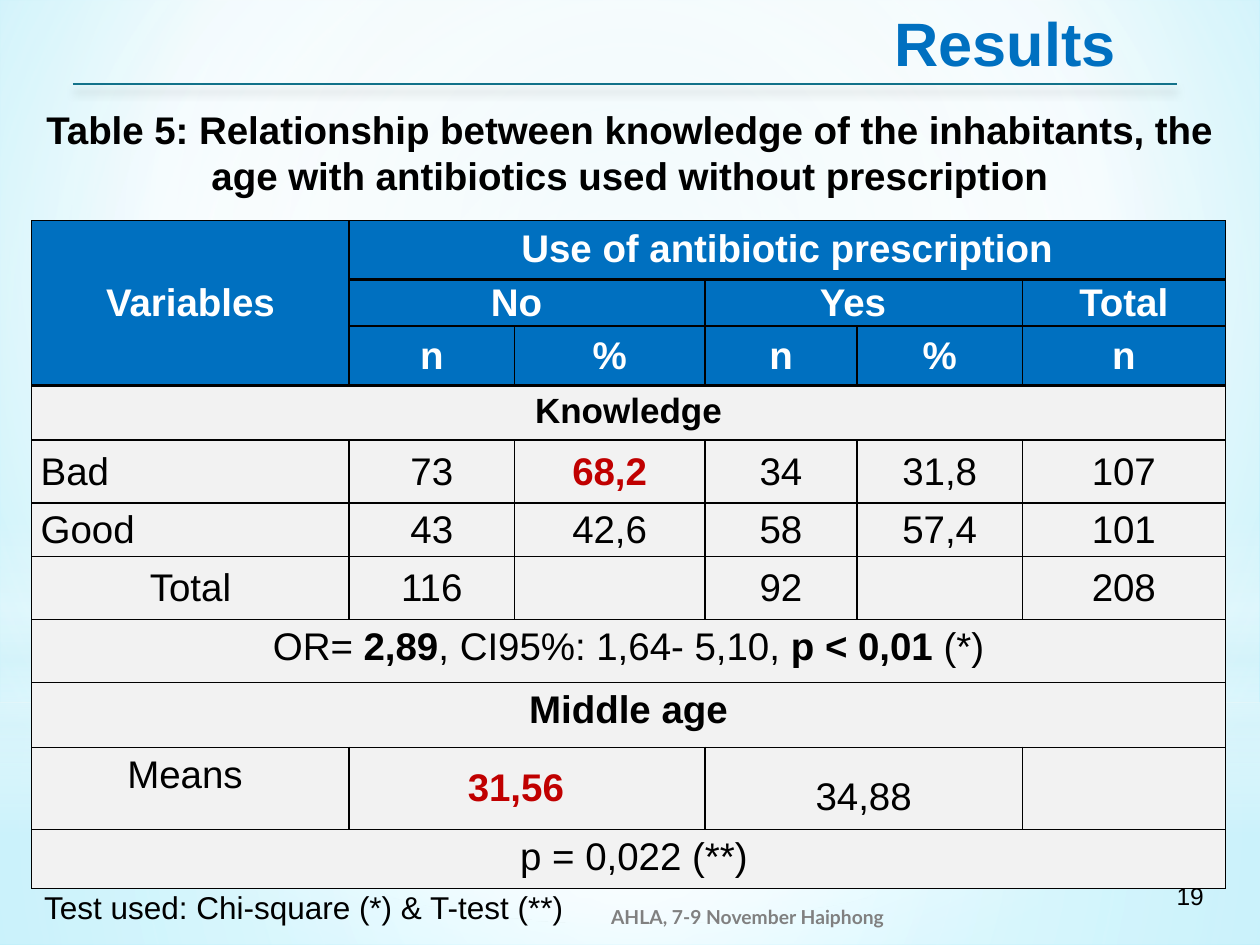
from dataclasses import dataclass

from lxml import etree
from pptx import Presentation
from pptx import util as u
from pptx.dml import color
from pptx.enum import shapes, text
from pptx.oxml import ns


@dataclass
class Theme:
    font: str = "Arial"
    footer_font: str = "Lato"
    blue: str = "0070C0"
    red: str = "C00000"
    black: str = "000000"
    white: str = "FFFFFF"
    panel: str = "F2F2F2"
    rule: str = "12728A"
    gray: str = "808080"
    mist: str = "DEF5FA"
    pale: str = "CDEFF7"
    aqua: str = "7CE7FF"
    title: int = 35
    body: int = 22
    section: int = 20
    note: int = 18
    page: int = 14
    footer: int = 11


theme = Theme()
Cm = u.Cm
LEFT, CENTER = text.PP_ALIGN.LEFT, text.PP_ALIGN.CENTER
TOP, MIDDLE = text.MSO_ANCHOR.TOP, text.MSO_ANCHOR.MIDDLE


def write(frame, words, size=theme.body, ink=theme.black, bold=False,
          font=theme.font, align=LEFT, spacing=None):
    paragraph = frame.paragraphs[0]
    paragraph.alignment = align
    paragraph.line_spacing = spacing
    for index, part in enumerate(words.split("|")):
        run = paragraph.add_run()
        run.text = part
        run.font.name = font
        run.font.size = u.Pt(size)
        run.font.bold = bold != (index % 2 == 1)
        run.font.color.rgb = color.RGBColor.from_string(ink)


def shade(fill, owner, stops, focus=None):
    fill.gradient()
    gradient = owner.find(".//" + ns.qn("a:gradFill"))
    for child in list(gradient):
        gradient.remove(child)
    stop_list = etree.SubElement(gradient, ns.qn("a:gsLst"))
    for position, tint, opacity in stops:
        stop = etree.SubElement(stop_list, ns.qn("a:gs"), pos=str(position * 1000))
        tone = etree.SubElement(stop, ns.qn("a:srgbClr"), val=tint)
        if opacity < 100:
            etree.SubElement(tone, ns.qn("a:alpha"), val=str(opacity * 1000))
    if focus:
        path = etree.SubElement(gradient, ns.qn("a:path"), path="circle")
        edges = {side: str(value * 1000) for side, value in zip("ltrb", focus)}
        etree.SubElement(path, ns.qn("a:fillToRect"), **edges)
    else:
        etree.SubElement(gradient, ns.qn("a:lin"), ang="5400000", scaled="0")


deck = Presentation()
deck.slide_width, deck.slide_height = Cm(25.4), Cm(19.05)
slide = deck.slides.add_slide(deck.slide_layouts[5])

shade(slide.background.fill, slide.element,
      [(0, theme.pale, 100), (60, theme.white, 100), (100, theme.aqua, 100)],
      (20, 10, 20, 60))
middle = (50, 50, 50, 50)
box, oval = shapes.MSO_SHAPE.RECTANGLE, shapes.MSO_SHAPE.OVAL
glows = [
    (box, 14.17, 4.88, middle,
     [(0, theme.white, 91), (37, theme.white, 76), (100, theme.mist, 79)]),
    (box, 0, 14.17, middle,
     [(0, theme.white, 89), (48, theme.white, 62), (100, theme.mist, 79)]),
    (box, 10.46, 6.35, None,
     [(0, theme.white, 0), (29, theme.white, 30), (45, theme.mist, 40),
      (55, theme.white, 26), (65, theme.mist, 60), (100, theme.white, 0)]),
    (oval, 4.45, 14.17, middle, [(0, theme.white, 100), (56, theme.white, 0)]),
]
for outline, top, height, focus, stops in glows:
    glow = slide.shapes.add_shape(outline, 0, Cm(top), deck.slide_width, Cm(height))
    glow.shadow.inherit = False
    glow.line.fill.background()
    shade(glow.fill, glow.element, stops, focus)

rule = slide.shapes.add_connector(
    shapes.MSO_CONNECTOR.STRAIGHT, Cm(1.47), Cm(1.7), Cm(23.72), Cm(1.7))
rule.line.color.rgb = color.RGBColor.from_string(theme.rule)
rule.line.width = u.Pt(1.25)
effects = etree.SubElement(rule.element.find(ns.qn("p:spPr")), ns.qn("a:effectLst"))
shadow = etree.SubElement(effects, ns.qn("a:outerShdw"), blurRad=str(u.Pt(5)),
                          dist=str(u.Pt(4)), dir="5400000", rotWithShape="0")
shadow_ink = etree.SubElement(shadow, ns.qn("a:srgbClr"), val=theme.black)
etree.SubElement(shadow_ink, ns.qn("a:alpha"), val="20000")

heading = slide.shapes.title
heading.element.getparent().append(heading.element)
heading.left, heading.top, heading.width, heading.height = (
    Cm(17.78), Cm(-0.03), Cm(5.03), Cm(1.75))
heading.text_frame.word_wrap = False
heading.text_frame.vertical_anchor = TOP
heading.text_frame.auto_size = text.MSO_AUTO_SIZE.SHAPE_TO_FIT_TEXT
write(heading.text_frame, "Results", size=theme.title, ink=theme.blue, bold=True)

captions = [
    ((0, 2.01, 25.4, 2.13), True, TOP,
     "Table 5: Relationship between knowledge of the inhabitants, "
     "the age with antibiotics used without prescription",
     dict(bold=True, align=CENTER)),
    ((0.64, 17.78, 11.07, 1.02), False, TOP,
     "Test used: Chi-square (*) & T-test (**)", dict(size=theme.note)),
    ((23.47, 17.63, 1.07, 0.86), False, TOP, "19", dict(size=theme.page)),
    ((12.07, 17.98, 9.32, 1.02), True, MIDDLE, "AHLA, 7-9 November Haiphong",
     dict(size=theme.footer, ink=theme.gray, bold=True, font=theme.footer_font)),
]
for place, wraps, anchor, words, style in captions:
    caption = slide.shapes.add_textbox(*map(Cm, place)).text_frame
    caption.word_wrap = wraps
    caption.vertical_anchor = anchor
    write(caption, words, **style)

results = [
    ["Variables", "Use of antibiotic prescription", "", "", "", ""],
    ["", "No", "", "Yes", "", "Total"],
    ["", "n", "%", "n", "%", "n"],
    ["Knowledge", "", "", "", "", ""],
    ["Bad", "73", "68,2", "34", "31,8", "107"],
    ["Good", "43", "42,6", "58", "57,4", "101"],
    ["Total", "116", "", "92", "", "208"],
    ["OR= |2,89|, CI95%: 1,64- 5,10, |p < 0,01 |(*)", "", "", "", "", ""],
    ["Middle age", "", "", "", "", ""],
    ["Means", "31,56", "", "34,88", "", ""],
    ["p = 0,022 (**)", "", "", "", "", ""],
]
column_widths = [6.4, 3.33, 3.84, 3.07, 3.33, 4.09]
row_heights = [1.19, 0.93, 1.19, 1.09, 1.27, 1.07, 1.27, 1.27, 1.31, 1.65, 1.19]
header_rows, compact_rows = (0, 1, 2), (1, 2, 4, 5, 6)
special = {
    (3, 0): dict(size=theme.section, bold=True),
    (4, 0): dict(align=LEFT),
    (5, 0): dict(align=LEFT),
    (4, 2): dict(ink=theme.red, bold=True),
    (8, 0): dict(bold=True),
    (9, 1): dict(ink=theme.red, bold=True, align=LEFT),
    (9, 3): dict(spacing=1.5),
}
left_margins = {(9, 1): 2.39, (10, 0): 0.47}
right_margins = {(1, 1): 0.61, (1, 3): 0.61, (9, 0): 0.47}

grid = slide.shapes.add_table(
    len(results), len(column_widths), Cm(0.64), Cm(4.45),
    Cm(sum(column_widths)), Cm(sum(row_heights)))
table = grid.table
table.first_row = table.horz_banding = False
for column, width in zip(table.columns, column_widths):
    column.width = Cm(width)
for row, height in zip(table.rows, row_heights):
    row.height = Cm(height)

cell_formats = list(grid.element.iter(ns.qn("a:tcPr")))
for r, row in enumerate(results):
    for c, words in enumerate(row):
        cell = table.cell(r, c)
        compact = r in compact_rows
        side = 0.18 if compact else 0.25
        cell.margin_left = Cm(left_margins.get((r, c), side))
        cell.margin_right = Cm(right_margins.get((r, c), side))
        cell.margin_top = cell.margin_bottom = Cm(0 if compact else 0.13)
        centered = compact or (r, c) in ((0, 0), (9, 1))
        cell.vertical_anchor = MIDDLE if centered else TOP
        cell_format = list(grid.element.iter(ns.qn("a:tcPr")))[r * len(row) + c]
        for edge in ("L", "R", "T", "B"):
            thick = (edge == "B" and r in (0, 2)) or (edge == "T" and r in (1, 3))
            border = etree.SubElement(cell_format, ns.qn("a:ln" + edge),
                                      w=str(u.Pt(2 if thick else 1)))
            paint = etree.SubElement(border, ns.qn("a:solidFill"))
            etree.SubElement(paint, ns.qn("a:srgbClr"), val=theme.black)
        header = r in header_rows
        cell.fill.solid()
        cell.fill.fore_color.rgb = color.RGBColor.from_string(
            theme.blue if header else theme.panel)
        if words:
            style = dict(align=CENTER, bold=header,
                         ink=theme.white if header else theme.black)
            write(cell.text_frame, words, **(style | special.get((r, c), {})))

full_width = [(r, 0, r, 5) for r in (3, 7, 8, 10)]
pairs = [(r, c, r, c + 1) for r in (1, 9) for c in (1, 3)]
for r, c, last_r, last_c in [(0, 0, 2, 0), (0, 1, 0, 5)] + full_width + pairs:
    table.cell(r, c).merge(table.cell(last_r, last_c))

deck.save("out.pptx")
